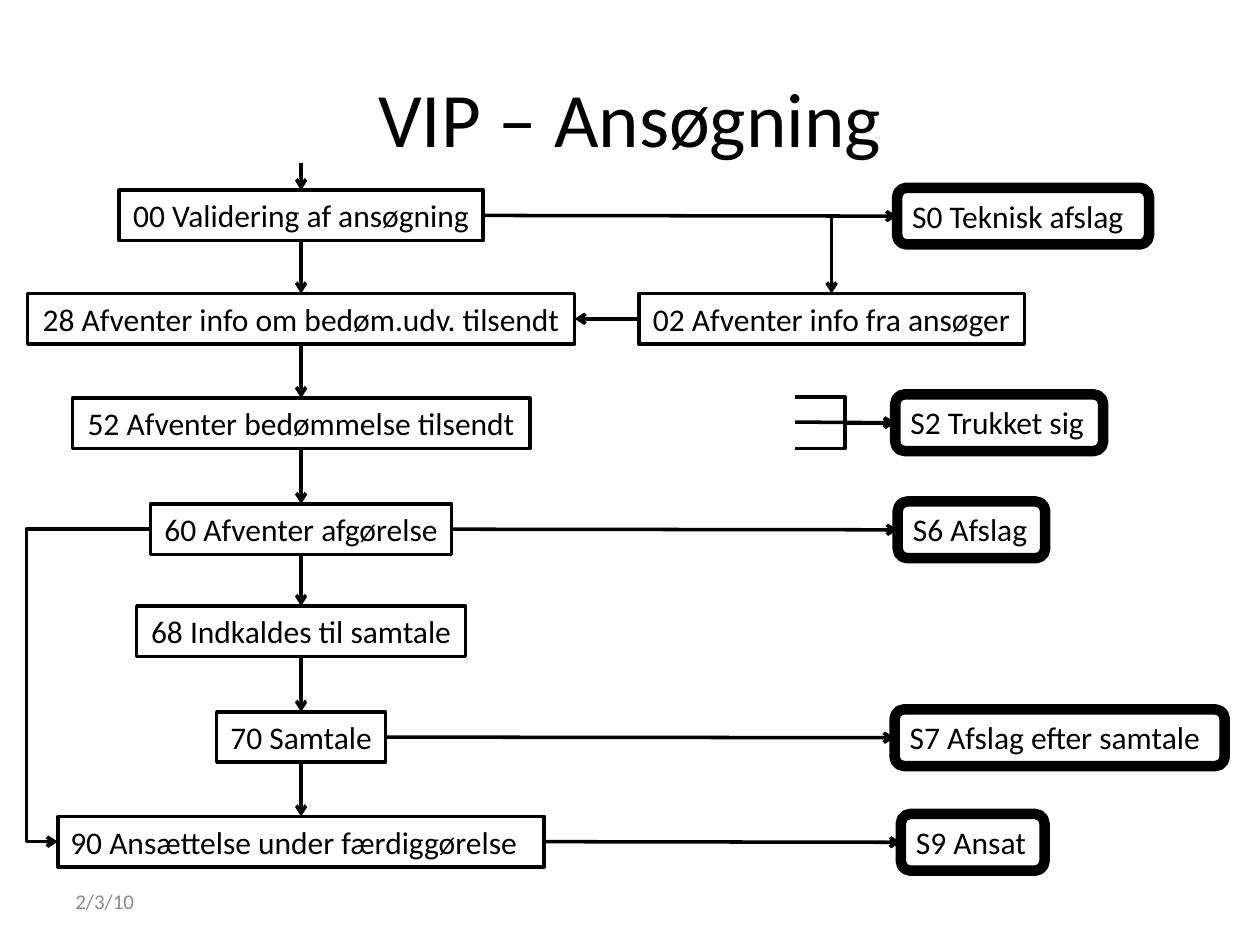
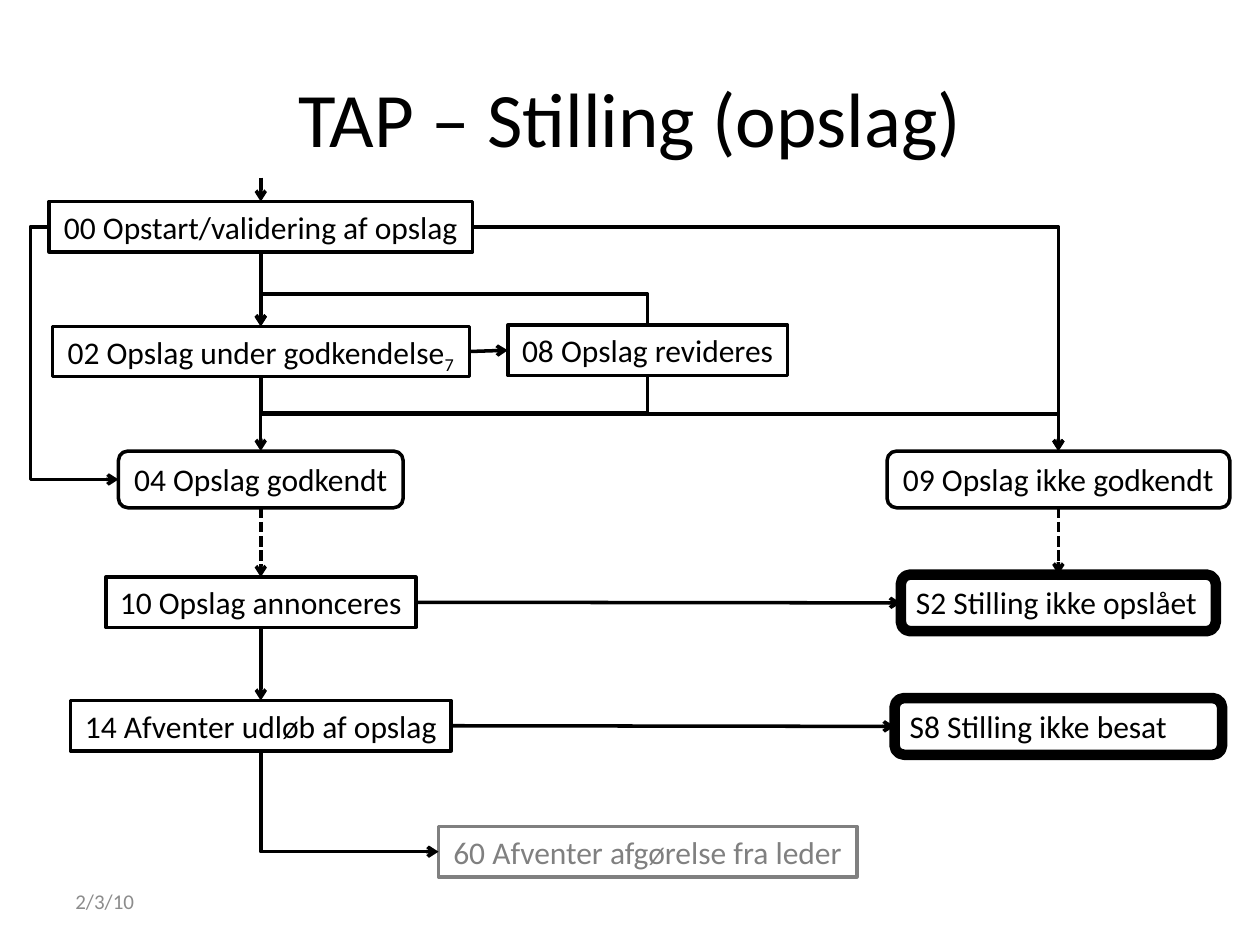
"""Build two flow charts: application steps and job posting steps."""
from lxml import etree
from pptx import Presentation
from pptx import util as u
from pptx.dml.color import RGBColor
from pptx.enum import dml, shapes, text
from pptx.oxml import ns

BLACK = RGBColor(0x00, 0x00, 0x00)
GREY = RGBColor(0x80, 0x80, 0x80)
PALE = RGBColor(0x8C, 0x8C, 0x8C)
FONT = "Calibri"
TOP, LEFT, DOWN, RIGHT = range(4)
MID, LOW = text.MSO_ANCHOR.MIDDLE, text.MSO_ANCHOR.TOP
CENTER, START = text.PP_ALIGN.CENTER, text.PP_ALIGN.LEFT
STEP = shapes.MSO_SHAPE.FLOWCHART_PROCESS
ROUND = shapes.MSO_SHAPE.FLOWCHART_ALTERNATE_PROCESS
LINE, ELBOW = shapes.MSO_CONNECTOR.STRAIGHT, shapes.MSO_CONNECTOR.ELBOW

# kind: form, height, line width, wrap, align, colour
KINDS = {
    "step": (STEP, 0.4, 2, False, CENTER, BLACK),
    "wide": (STEP, 0.4, 2, True, START, BLACK),
    "next": (STEP, 0.4, 2, False, CENTER, GREY),
    "state": (ROUND, 0.45, 2, False, CENTER, BLACK),
    "end": (ROUND, 0.45, 6, True, START, BLACK),
}

# box: kind, middle, top, width, wording, optional subscript
# link: start (box or point), side, end box, side, optional bend, optional dash
# A bend of None is straight, "L" turns once, a number places the cross leg.
CHARTS = [
    {
        "title": "VIP – Ansøgning",
        "boxes": [
            ("step", 2.39, 1.51, 2.89, "00 Validering af ansøgning"),
            ("step", 2.39, 2.33, 4.34, "28 Afventer info om bedøm.udv. tilsendt"),
            ("step", 2.39, 3.16, 3.63, "52 Afventer bedømmelse tilsendt"),
            ("step", 2.39, 4, 2.39, "60 Afventer afgørelse"),
            ("step", 2.39, 4.81, 2.61, "68 Indkaldes til samtale"),
            ("step", 2.39, 5.65, 1.34, "70 Samtale"),
            ("wide", 2.39, 6.48, 3.86, "90 Ansættelse under færdiggørelse"),
            ("step", 6.6, 2.33, 3.06, "02 Afventer info fra ansøger"),
            ("end", 8.12, 1.49, 2, "S0 Teknisk afslag"),
            ("end", 7.93, 3.13, 1.65, "S2 Trukket sig"),
            ("end", 7.71, 3.98, 1.17, "S6 Afslag"),
            ("end", 8.41, 5.63, 2.62, "S7 Afslag efter samtale"),
            ("end", 7.72, 6.46, 1.14, "S9 Ansat"),
        ],
        "links": [
            ((2.39, 1.29), None, "00", TOP),
            *[(a, DOWN, b, TOP) for a, b in (
                ("00", "28"), ("28", "52"), ("52", "60"),
                ("60", "68"), ("68", "70"), ("70", "90"))],
            *[(a, RIGHT, b, LEFT) for a, b in (
                ("00", "S0"), ("60", "S6"), ("70", "S7"), ("90", "S9"))],
            ("00", RIGHT, "02", TOP, "L"),
            ("02", LEFT, "28", RIGHT),
            ("60", LEFT, "90", LEFT, 1.34),
            ((6.31, 3.35), None, "S2", LEFT),
            ((6.31, 3.15), None, "S2", LEFT, 0.5),
            ((6.31, 3.56), None, "S2", LEFT, 0.5),
        ],
    },
    {
        "title": "TAP – Stilling (opslag)",
        "boxes": [
            ("step", 2.07, 1.6, 3.36, "00 Opstart/validering af opslag"),
            ("step", 2.07, 2.59, 3.31, "02 Opslag under godkendelse", "7"),
            ("state", 2.07, 3.58, 2.26, "04 Opslag godkendt"),
            ("step", 2.07, 4.58, 2.46, "10 Opslag annonceres"),
            ("step", 2.07, 5.56, 3.02, "14 Afventer udløb af opslag"),
            ("step", 5.14, 2.58, 2.22, "08 Opslag revideres"),
            ("next", 5.14, 6.56, 3.32, "60 Afventer afgørelse fra leder"),
            ("state", 8.4, 3.58, 2.72, "09 Opslag ikke godkendt"),
            ("end", 8.4, 4.56, 2.5, "S2 Stilling ikke opslået"),
            ("end", 8.4, 5.54, 2.6, "S8 Stilling ikke besat"),
        ],
        "links": [
            ((2.07, 1.41), None, "00", TOP),
            ("00", DOWN, "02", TOP),
            ("10", DOWN, "14", TOP),
            ("04", DOWN, "10", TOP, None, True),
            ("09", DOWN, "S2", TOP, None, True),
            ("02", RIGHT, "08", LEFT),
            ("10", RIGHT, "S2", LEFT),
            ("14", RIGHT, "S8", LEFT),
            ("00", LEFT, "04", LEFT, -0.27),
            ("00", RIGHT, "09", TOP, "L"),
            ("08", TOP, "02", TOP, -25),
            ("08", DOWN, "04", TOP, 0.5),
            ("02", DOWN, "09", TOP, 0.5),
            ("14", DOWN, "60", LEFT, "L"),
        ],
    },
]


def write(shape, words, size, tint, align, anchor, wrap, sub=None):
    """Put formatted words into a shape."""
    frame = shape.text_frame
    for name, value in {"word_wrap": wrap, "vertical_anchor": anchor}.items():
        setattr(frame, name, value)
    para = frame.paragraphs[0]
    para.alignment = align
    for part in filter(None, (words, sub)):
        run = para.add_run()
        run.text = part
        for name, value in {"name": FONT, "size": u.Pt(size)}.items():
            setattr(run.font, name, value)
        run.font.color.rgb = tint
    if sub:
        run.font._element.set("baseline", "-25000")


def join(slide, boxes, start, side, end, goal, bend=None, dash=False):
    """Draw an arrow from a box or point to a box."""
    first = start if side is None else (0, 0)
    x, y = (u.Inches(n) for n in first)
    wire = slide.shapes.add_connector(LINE if bend is None else ELBOW, x, y, x, y)
    if side is not None:
        wire.begin_connect(boxes[start], side)
    wire.end_connect(boxes[end], goal)
    wire.line.color.rgb = BLACK
    wire.line.width = u.Pt(2)
    if dash:
        wire.line.dash_style = dml.MSO_LINE.SQUARE_DOT
    props = wire._element.spPr
    etree.SubElement(props.find(ns.qn("a:ln")), ns.qn("a:tailEnd"), type="arrow")
    etree.SubElement(props, ns.qn("a:effectLst"))
    if bend is None:
        return
    geom = props.find(ns.qn("a:prstGeom"))
    if bend == "L":
        geom.set("prst", "bentConnector2")
    else:
        etree.SubElement(geom.find(ns.qn("a:avLst")), ns.qn("a:gd"),
                         name="adj1", fmla=f"val {round(bend * 100000)}")
    if side in (TOP, DOWN):
        wide, high = wire.end_x - wire.begin_x, wire.end_y - wire.begin_y
        midx, midy = wire.begin_x + wide // 2, wire.begin_y + high // 2
        spots = {"begin_x": midx + high // 2, "end_x": midx - high // 2,
                 "begin_y": midy - wide // 2, "end_y": midy + wide // 2}
        for name, value in spots.items():
            setattr(wire, name, value)
        props.find(ns.qn("a:xfrm")).set("rot", "16200000")


deck = Presentation()
deck.slide_width, deck.slide_height = u.Inches(10), u.Inches(7.5)
for chart in CHARTS:
    slide = deck.slides.add_slide(deck.slide_layouts[6])
    for words, spot, size, tint, align in (
            (chart["title"], (0.5, 0.3, 9, 1.25), 44, BLACK, CENTER),
            ("2/3/10", (0.5, 6.95, 2.33, 0.4), 12, PALE, START)):
        label = slide.shapes.add_textbox(*map(u.Inches, spot))
        write(label, words, size, tint, align, MID, True)
    boxes = {}
    for kind, mid, top, width, words, *sub in chart["boxes"]:
        form, high, thick, wrap, align, tint = KINDS[kind]
        spot = (mid - width / 2, top, width, high)
        box = slide.shapes.add_shape(form, *map(u.Inches, spot))
        box.shadow.inherit = False
        box.fill.background()
        box.line.color.rgb = tint
        box.line.width = u.Pt(thick)
        write(box, words, 18, tint, align, LOW, wrap, *sub)
        box.text_frame.auto_size = text.MSO_AUTO_SIZE.SHAPE_TO_FIT_TEXT
        boxes[words.split()[0]] = box
    for link in chart["links"]:
        join(slide, boxes, *link)
deck.save("out.pptx")
